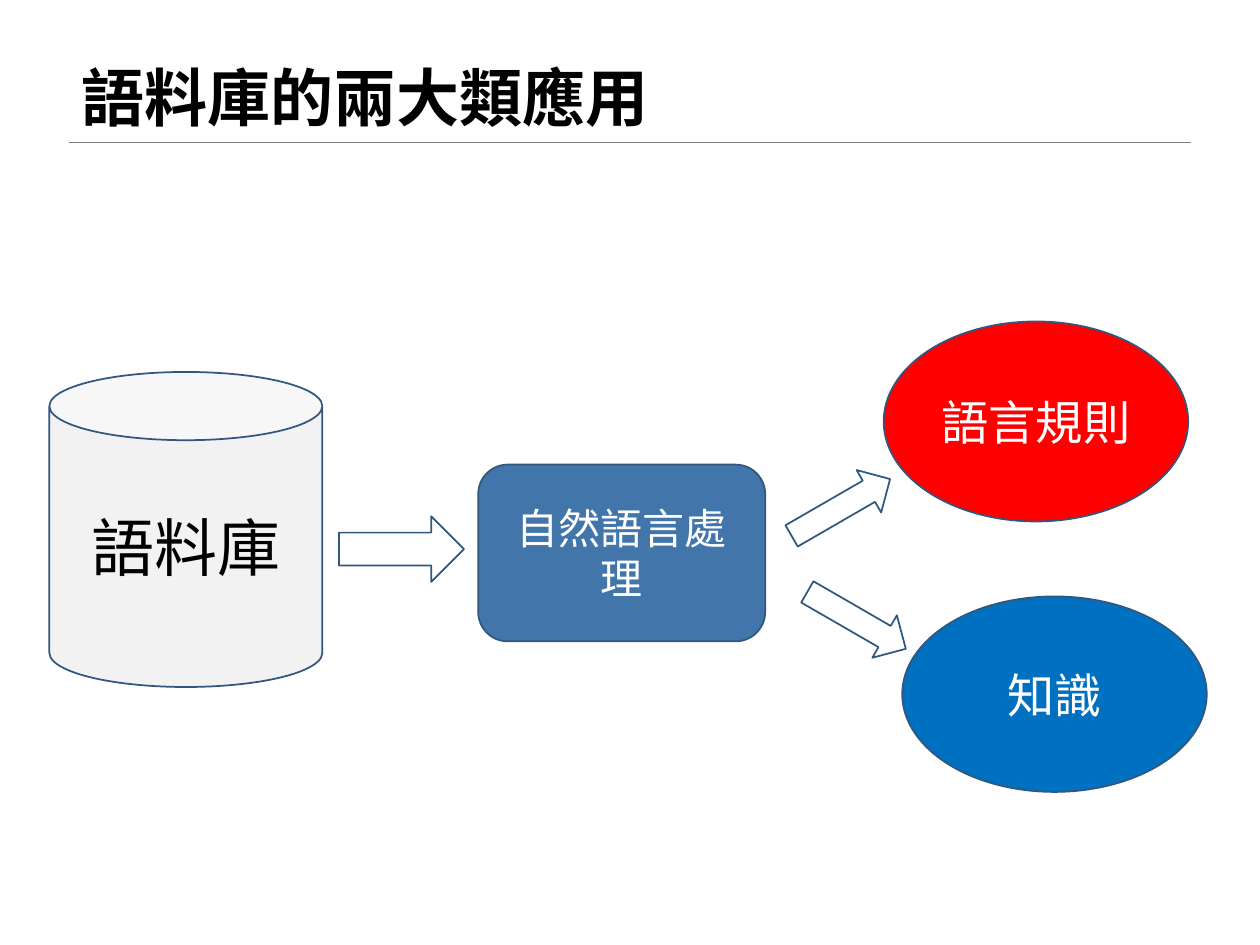
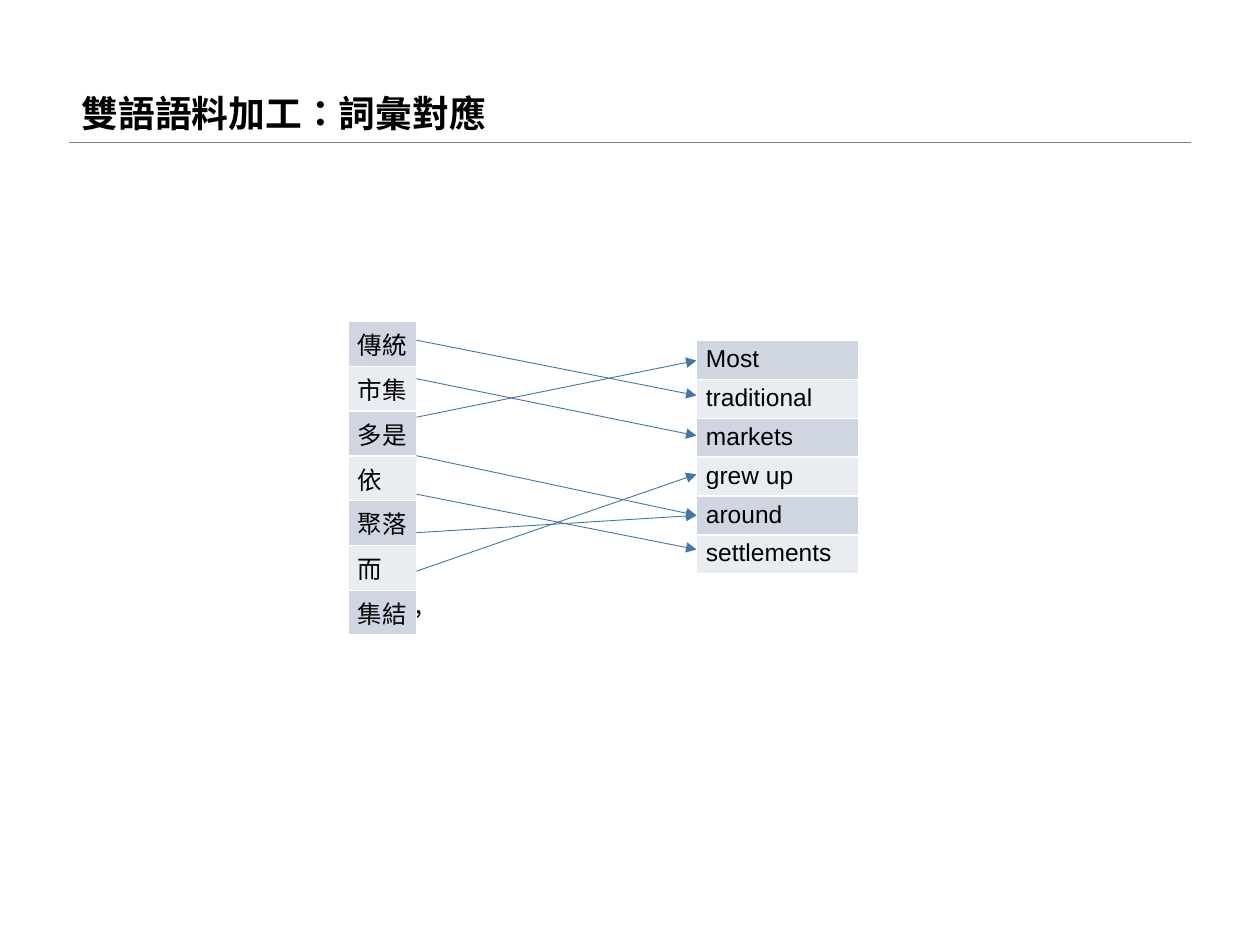
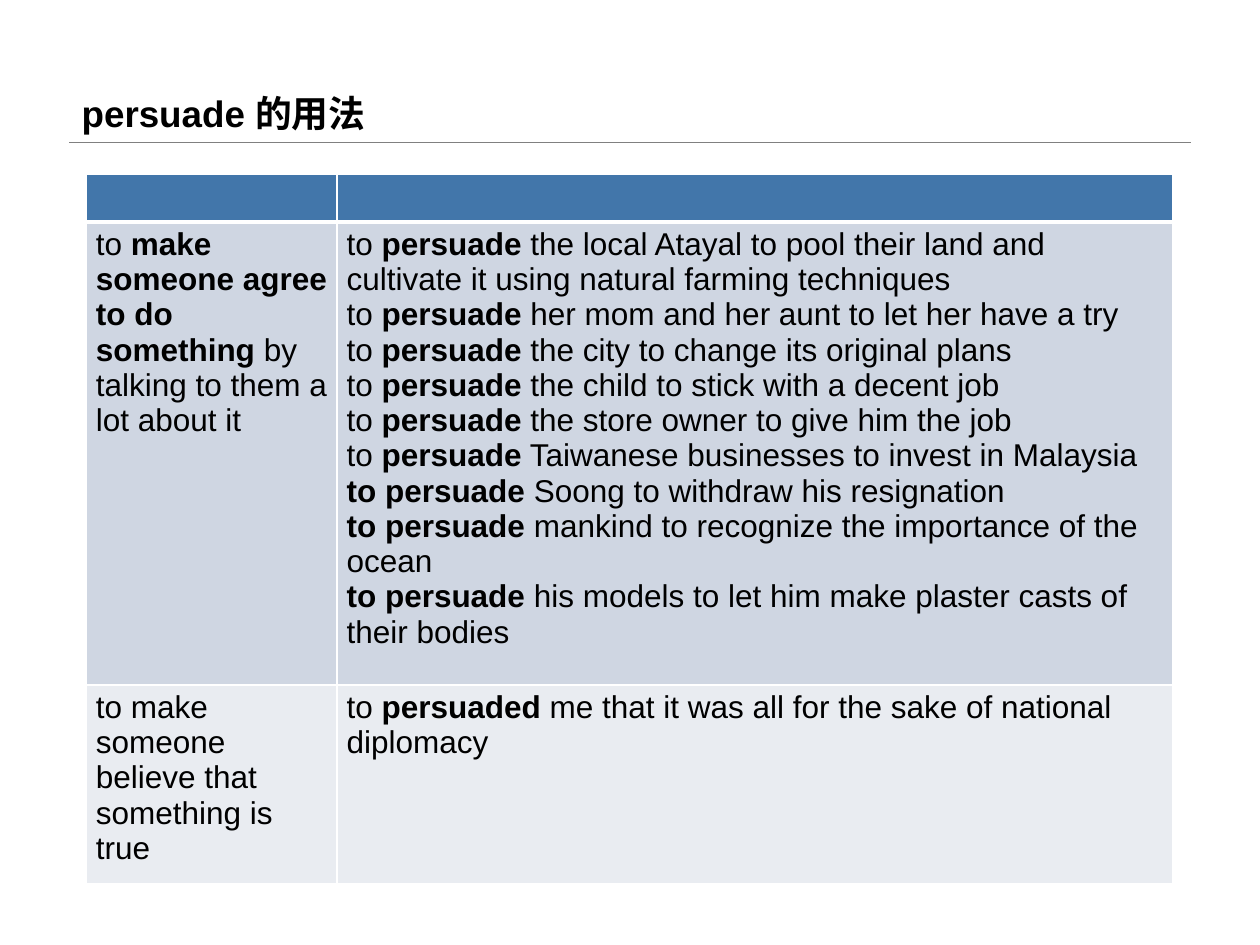
from lxml import etree
from pptx import Presentation
from pptx.dml.color import RGBColor
from pptx.enum.shapes import MSO_CONNECTOR, MSO_SHAPE
from pptx.enum.text import MSO_ANCHOR, PP_ALIGN
from pptx.oxml.ns import qn
from pptx.util import Pt

BLACK = RGBColor(0x00, 0x00, 0x00)
WHITE = RGBColor(0xFF, 0xFF, 0xFF)
GRAY = RGBColor(0x80, 0x80, 0x80)
LIGHT = RGBColor(0xF2, 0xF2, 0xF2)
BLUE = RGBColor(0x42, 0x76, 0xAA)
OUTLINE = RGBColor(0x31, 0x57, 0x7E)
RED = RGBColor(0xFF, 0x00, 0x00)
KNOWLEDGE = RGBColor(0x00, 0x70, 0xC0)
BANDS = [RGBColor(0xCF, 0xD6, 0xE2), RGBColor(0xE9, 0xEC, 0xF1)]
FONT = "Arial"
CAN = MSO_SHAPE.CAN
ROUNDED = MSO_SHAPE.ROUNDED_RECTANGLE
OVAL = MSO_SHAPE.OVAL
ARROW = MSO_SHAPE.RIGHT_ARROW
STRAIGHT = MSO_CONNECTOR.STRAIGHT
CENTER = PP_ALIGN.CENTER
MIDDLE = MSO_ANCHOR.MIDDLE
BOTTOM = MSO_ANCHOR.BOTTOM
INSET_X, INSET_Y = Pt(5.4), Pt(2.7)


def add_run(p, text, size, color, bold=False):
    r = p.add_run()
    r.text = text
    r.font.name = FONT
    r.font.size = Pt(size)
    r.font.bold = bold
    r.font.color.rgb = color
    r._r.get_or_add_rPr().set("lang", "zh-TW")


def add_line(s, x1, y1, x2, y2, color, width):
    line = s.shapes.add_connector(STRAIGHT, Pt(x1), Pt(y1), Pt(x2), Pt(y2))
    line.line.color.rgb = color
    line.line.width = Pt(width)
    etree.SubElement(line._element.spPr, qn("a:effectLst"))
    return line


prs = Presentation()
prs.slide_width, prs.slide_height = Pt(720), Pt(540)

titles = [("語料庫的兩大類應用", 36), ("雙語語料加工：詞彙對應", 21), ("persuade 的用法", 21)]
slides = []
for title, size in titles:
    s = prs.slides.add_slide(prs.slide_layouts[6])
    add_line(s, 39.6, 81, 680.4, 81, GRAY, 0.25)
    tf = s.shapes.add_textbox(Pt(39.6), Pt(0), Pt(640.8), Pt(81)).text_frame
    tf.word_wrap = True
    tf.vertical_anchor = BOTTOM
    p = tf.paragraphs[0]
    p.line_spacing = 0.9
    add_run(p, title, size, BLACK, True)
    slides.append(s)
uses, alignment, usage = slides

flow = [
    (CAN, 28.2, 212.6, 156, 180, 0, LIGHT, "語料庫", 36, BLACK),
    (ROUNDED, 273.3, 265.5, 164, 101, 0, BLUE, "自然語言處理", 24, WHITE),
    (ARROW, 193.7, 295, 71.5, 37.5, 0, WHITE, "", 0, WHITE),
    (OVAL, 505, 183.7, 174, 114.3, 0, RED, "語言規則", 27, WHITE),
    (OVAL, 515.6, 340.8, 174, 111.7, 0, KNOWLEDGE, "知識", 27, WHITE),
    (ARROW, 457, 340.5, 65, 28, 30, WHITE, "", 0, WHITE),
    (ARROW, 448, 276, 65, 28, 330, WHITE, "", 0, WHITE),
]
for kind, x, y, w, h, angle, fill, text, size, color in flow:
    sp = uses.shapes.add_shape(kind, Pt(x), Pt(y), Pt(w), Pt(h))
    sp.rotation = angle
    sp.shadow.inherit = False
    sp.fill.solid()
    sp.fill.fore_color.rgb = fill
    sp.line.color.rgb = OUTLINE
    sp.line.width = Pt(1)
    if text:
        tf = sp.text_frame
        tf.word_wrap = True
        tf.vertical_anchor = MIDDLE
        tf.margin_left = tf.margin_right = INSET_X
        tf.margin_top = tf.margin_bottom = INSET_Y
        tf.paragraphs[0].alignment = CENTER
        add_run(tf.paragraphs[0], text, size, color)

chinese = ["傳統", "市集", "多是", "依", "聚落", "而", "集結，"]
english = ["Most", "traditional", "markets", "grew up", "around", "settlements"]
examples = [
    "to |persuade| the local Atayal to pool their land and cultivate it using natural farming techniques",
    "to |persuade| her mom and her aunt to let her have a try",
    "to |persuade| the city to change its original plans",
    "to |persuade| the child to stick with a decent job",
    "to |persuade| the store owner to give him the job",
    "to |persuade| Taiwanese businesses to invest in Malaysia",
    "|to persuade| Soong to withdraw his resignation",
    "|to persuade| mankind to recognize the importance of the ocean",
    "|to persuade| his models to let him make plaster casts of their bodies",
]
senses = [
    [[""], [""]],
    [["to |make someone agree to do something |by talking to them a lot about it"], examples],
    [["to make someone believe that something is true"],
     ["to |persuaded| me that it was all for the sake of national diplomacy"]],
]
tables = [
    (alignment, 199, 183.7, [38.9], [25.6] * 7, 14, False, [[[word]] for word in chinese]),
    (alignment, 398, 194.6, [92.6], [21.6] * 6, 14, False, [[[word]] for word in english]),
    (usage, 49.4, 99.8, [143.3, 477.4], [24.7, 247, 105.4], 18, True, senses),
]
for s, x, y, widths, heights, size, header, rows in tables:
    table = s.shapes.add_table(len(rows), len(widths), Pt(x), Pt(y),
                               Pt(sum(widths)), Pt(sum(heights))).table
    table.first_row = header
    for column, width in zip(table.columns, widths):
        column.width = Pt(width)
    for i, row in enumerate(rows):
        table.rows[i].height = Pt(heights[i])
        is_header = header and i == 0
        for j, paragraphs in enumerate(row):
            cell = table.cell(i, j)
            cell.margin_left = cell.margin_right = INSET_X
            cell.margin_top = cell.margin_bottom = INSET_Y
            cell.fill.solid()
            cell.fill.fore_color.rgb = BLUE if is_header else BANDS[(i - header) % 2]
            tf = cell.text_frame
            for k, text in enumerate(paragraphs):
                p = tf.add_paragraph() if k else tf.paragraphs[0]
                for n, part in enumerate(text.split("|")):
                    if part:
                        add_run(p, part, size, BLACK, n % 2 == 1)
                if not text:
                    etree.SubElement(p._p, qn("a:endParaRPr"), sz=str(size * 100))
            tcPr = cell._tc.get_or_add_tcPr()
            for n, side in enumerate(["lnL", "lnR", "lnT", "lnB"]):
                thick = (is_header and side == "lnB") or (header and i == 1 and side == "lnT")
                ln = etree.Element(qn("a:" + side), w=str(Pt(3 if thick else 1)))
                fill = etree.SubElement(ln, qn("a:solidFill"))
                etree.SubElement(fill, qn("a:srgbClr"), val=str(WHITE))
                tcPr.insert(n, ln)

english_y = [206, 226, 249, 271, 294.5, 314]
matches = [1, 2, 0, 4, 5, 4, 3]
for i, match in enumerate(matches):
    link = add_line(alignment, 238, 194.4 + 22 * i, 398, english_y[match], BLUE, 0.5)
    etree.SubElement(link.line._get_or_add_ln(), qn("a:tailEnd"), type="triangle")

prs.save("out.pptx")
